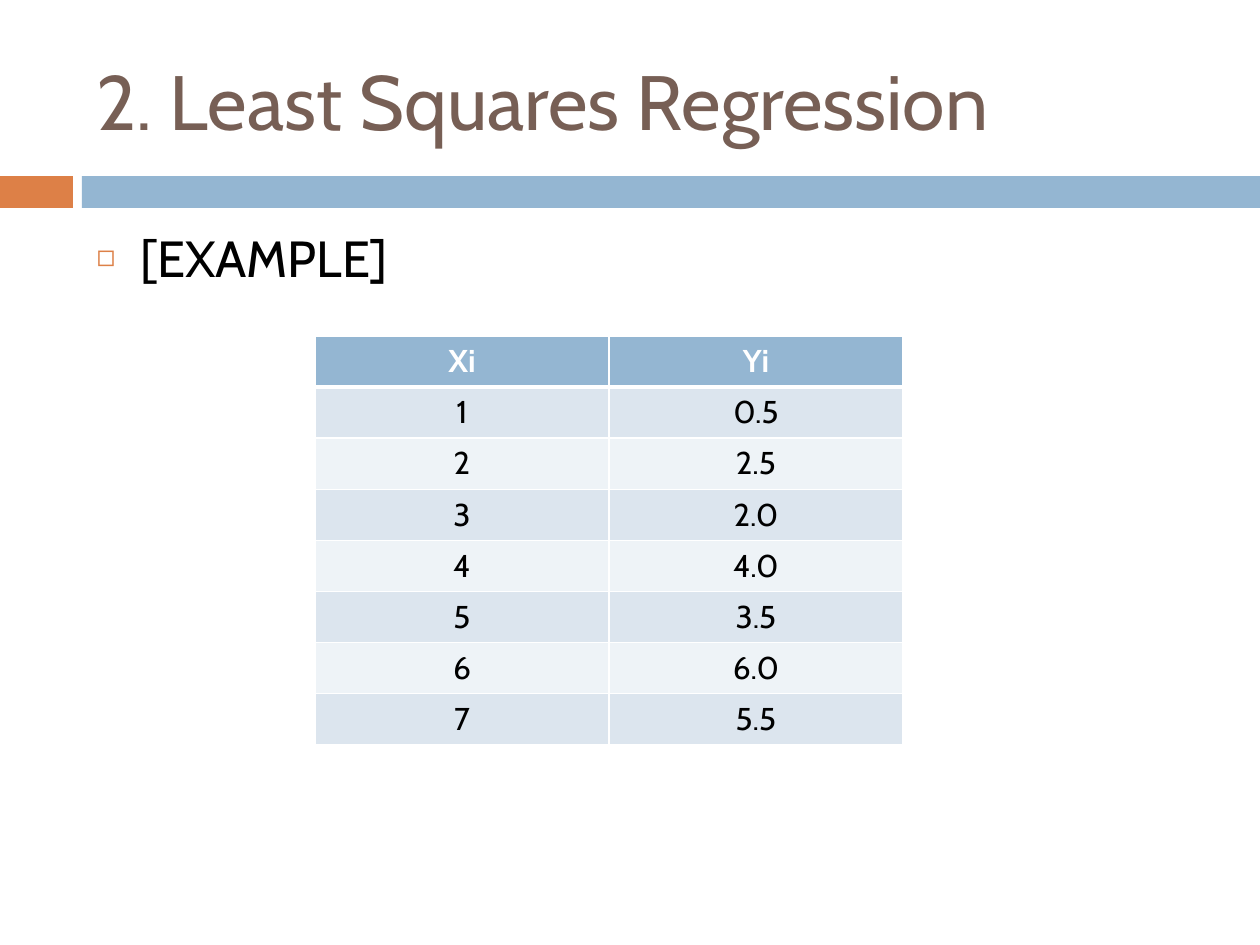
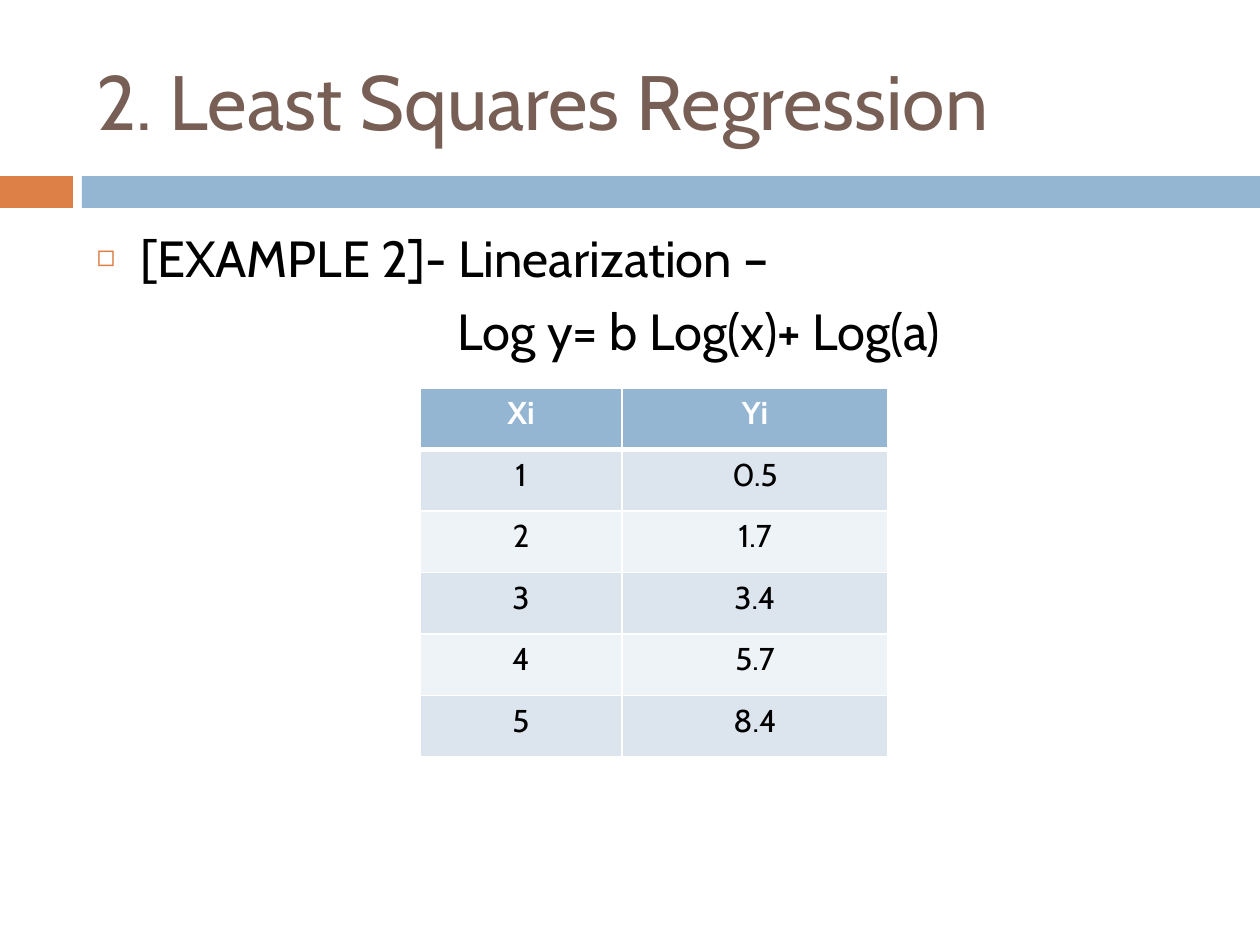
from lxml.etree import SubElement
from pptx import Presentation
from pptx.dml.color import RGBColor
from pptx.enum.shapes import MSO_SHAPE
from pptx.enum.text import MSO_ANCHOR, MSO_AUTO_SIZE, PP_ALIGN
from pptx.oxml.ns import qn
from pptx.util import Emu, Pt

FONT = "Cabin"
TITLE = "2. Least Squares Regression"
WHITE, BLACK, BROWN = "FFFFFF", "000000", "775F55"
ORANGE, BLUE = "DD8047", "94B6D2"
ROW_FILLS = ("DCE5EE", "EEF3F7")
TITLE_AREA = (84, 32, 1124, 136)
BODY_AREA = (84, 220, 1124, 620)
BULLET_INDENT = 44
EQUATION_INDENT = 361


def px(length):
    """Turn px at 126 to the inch into EMU."""
    return Emu(round(length * 914400 / 126))


def color(hex_code):
    """Turn a hex string into a colour."""
    return RGBColor.from_string(hex_code)


def set_font(para, size, hex_code, bold=False):
    """Give a whole paragraph its font."""
    font = para.font
    font.name, font.size, font.bold = FONT, Pt(size), bold
    font.color.rgb = color(hex_code)


def add_band(page, left, width, fill):
    """Draw one flat band under the title."""
    band = page.shapes.add_shape(
        MSO_SHAPE.RECTANGLE, px(left), px(176), px(width), px(32))
    band.shadow.inherit = False
    band.fill.solid()
    band.fill.fore_color.rgb = color(fill)
    band.line.fill.background()


def place(box, area, anchor):
    """Move a placeholder and return its text frame."""
    box.left, box.top, box.width, box.height = map(px, area)
    frame = box.text_frame
    frame.word_wrap = True
    frame.auto_size = MSO_AUTO_SIZE.NONE
    frame.vertical_anchor = anchor
    return frame


def add_page(deck):
    """Add a slide with the shared bands and title."""
    page = deck.slides.add_slide(deck.slide_layouts[1])
    add_band(page, 0, 73, ORANGE)
    add_band(page, 82, 1178, BLUE)
    frame = place(page.shapes.title, TITLE_AREA, MSO_ANCHOR.MIDDLE)
    frame.text = TITLE
    para = frame.paragraphs[0]
    para.alignment = PP_ALIGN.LEFT
    set_font(para, 44, BROWN)
    return page


def set_bullet(para):
    """Give a paragraph a hanging square bullet."""
    properties = para._p.get_or_add_pPr()
    properties.set("marL", str(px(BULLET_INDENT)))
    properties.set("indent", str(-px(BULLET_INDENT)))
    tint = SubElement(properties, qn("a:buClr"))
    SubElement(tint, qn("a:srgbClr"), val=ORANGE)
    SubElement(properties, qn("a:buSzPct"), val="60000")
    SubElement(properties, qn("a:buChar"), char="◻")


def set_plain_indent(para):
    """Indent a paragraph without a bullet."""
    properties = para._p.get_or_add_pPr()
    properties.set("marL", str(px(EQUATION_INDENT)))
    properties.set("indent", "0")
    SubElement(properties, qn("a:buNone"))


def fill_body(page, heading, equation=None):
    """Write the bulleted heading and an optional equation line."""
    frame = place(page.placeholders[1], BODY_AREA, MSO_ANCHOR.TOP)
    para = frame.paragraphs[0]
    para.text = heading
    set_bullet(para)
    para.space_before = Pt(0)
    set_font(para, 29, BLACK)
    if equation:
        para = frame.add_paragraph()
        para.text = equation
        set_plain_indent(para)
        para.space_before = Pt(7)
        set_font(para, 29, BLACK)


def set_borders(cell, top, bottom):
    """Draw white cell borders, with top and bottom widths in points."""
    properties = cell._tc.get_or_add_tcPr()
    for side, width in (("L", 1), ("R", 1), ("T", top), ("B", bottom)):
        line = SubElement(properties, qn(f"a:ln{side}"), w=str(Pt(width)))
        solid = SubElement(line, qn("a:solidFill"))
        SubElement(solid, qn("a:srgbClr"), val=WHITE)


def fill_cell(cell, text, row):
    """Write and format one table cell, row 0 being the header."""
    header = row == 0
    set_borders(cell, 3 if row == 1 else 1, 3 if header else 1)
    cell.fill.solid()
    cell.fill.fore_color.rgb = color(BLUE if header else ROW_FILLS[(row - 1) % 2])
    cell.text = text
    para = cell.text_frame.paragraphs[0]
    para.alignment = PP_ALIGN.CENTER
    set_font(para, 18, WHITE if header else BLACK, header)


def add_data_table(page, left, top, widths, height, y_values):
    """Add a table of Yi values against Xi counted from 1."""
    rows = [("Xi", "Yi")]
    rows += [(str(x), y) for x, y in enumerate(y_values, 1)]
    table = page.shapes.add_table(
        len(rows), 2, px(left), px(top), px(sum(widths)), px(height)).table
    for column, width in zip(table.columns, widths):
        column.width = px(width)
    for row, values in enumerate(rows):
        for column, text in enumerate(values):
            fill_cell(table.cell(row, column), text, row)


def main():
    """Build and save the deck."""
    deck = Presentation()
    deck.slide_width, deck.slide_height = px(1260), px(945)

    page = add_page(deck)
    fill_body(page, "[EXAMPLE]")
    add_data_table(page, 315, 336, (294, 294), 408,
                   ("0.5", "2.5", "2.0", "4.0", "3.5", "6.0", "5.5"))

    page = add_page(deck)
    fill_body(page, "[EXAMPLE 2]- Linearization –", "Log y= b Log(x)+ Log(a)")
    add_data_table(page, 420, 388, (202, 266), 369,
                   ("0.5", "1.7", "3.4", "5.7", "8.4"))

    deck.save("out.pptx")


if __name__ == "__main__":
    main()
